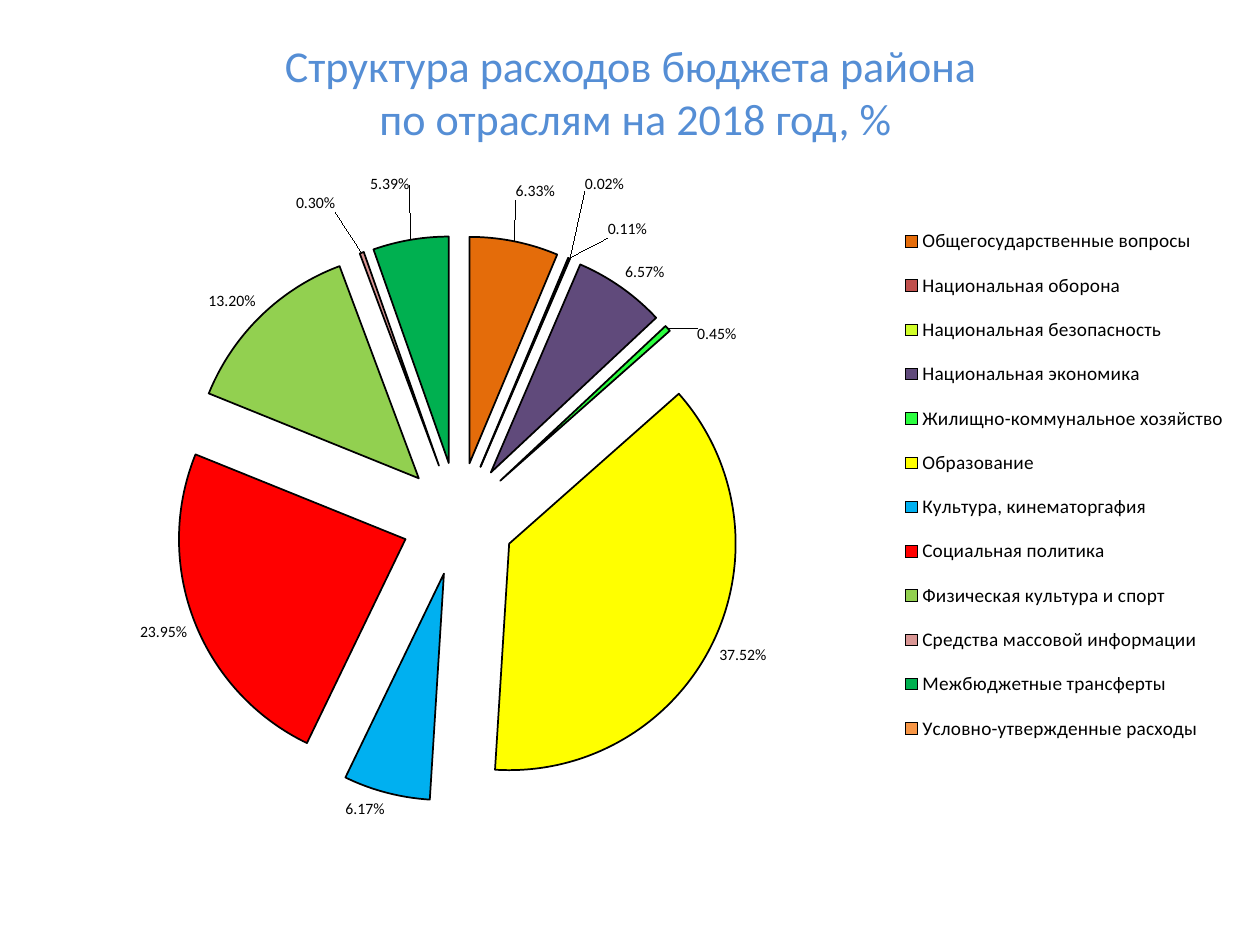
from lxml import etree
from pptx import Presentation
from pptx.chart.data import CategoryChartData
from pptx.dml.color import RGBColor
from pptx.enum.chart import XL_CHART_TYPE, XL_LABEL_POSITION, XL_LEGEND_POSITION
from pptx.enum.text import MSO_ANCHOR, PP_ALIGN
from pptx.oxml.ns import qn
from pptx.util import Inches, Pt

PIE = XL_CHART_TYPE.PIE
OUT_END = XL_LABEL_POSITION.OUTSIDE_END
RIGHT = XL_LEGEND_POSITION.RIGHT
MIDDLE = MSO_ANCHOR.MIDDLE
CENTER = PP_ALIGN.CENTER
FONT = "Calibri"
RATE = "0.00%"

SHARES = [
    ("Общегосударственные вопросы", 0.0633, "E46C0A"),
    ("Национальная оборона", 0.0011, "C0504D"),
    ("Национальная безопасность", 0.0002, "D1FE2A"),
    ("Национальная экономика", 0.0657, "604A7B"),
    ("Жилищно-коммунальное хозяйство", 0.0045, "2BFD3F"),
    ("Образование", 0.3752, "FFFF00"),
    ("Культура, кинематоргафия", 0.0617, "00B0F0"),
    ("Социальная политика", 0.2395, "FF0000"),
    ("Физическая культура и спорт", 0.132, "92D050"),
    ("Средства массовой информации", 0.003, "D99694"),
    ("Межбюджетные трансферты", 0.0539, "00B050"),
    ("Условно-утвержденные расходы", 0, "F79646"),
]
SHIFTS = {0: (0, -0.05), 1: (0.03, -0.02), 2: (0.01, -0.09),
          4: (0.02, 0.03), 9: (-0.02, -0.05), 10: (0, -0.07)}


def color(code):
    return RGBColor.from_string(code)


def style(item, values):
    for name, value in values.items():
        setattr(item, name, value)


def place(shape, box):
    names = ("left", "top", "width", "height")
    style(shape, dict(zip(names, map(Inches, box))))


def node(tag, **attrs):
    return etree.Element(qn(tag), attrs)


def layout(**values):
    root = node("c:layout")
    manual = etree.SubElement(root, qn("c:manualLayout"))
    for name, value in values.items():
        manual.append(node(f"c:{name}", val=str(value)))
    return root


def framed(x, y, w, h, **target):
    return layout(**target, xMode="edge", yMode="edge", x=x, y=y, w=w, h=h)


def add_title(slide, box):
    title = slide.shapes.title
    place(title, box)
    frame = title.text_frame
    style(frame, {"word_wrap": True, "vertical_anchor": MIDDLE})
    para = frame.paragraphs[0]
    para.text = "Структура расходов бюджета района\v по отраслям на 2018 год, %"
    para.alignment = CENTER
    for run in para.runs:
        style(run.font, {"name": FONT, "size": Pt(25.2)})
        run.font.color.rgb = color("558ED5")


def outline(line):
    line.color.rgb = color("000000")
    line.width = Pt(1)


def add_labels(series):
    labels = series.data_labels
    style(labels, {"show_value": True, "show_percentage": False,
                   "position": OUT_END, "number_format": RATE,
                   "number_format_is_linked": False})
    style(labels.font, {"name": FONT, "size": Pt(9)})
    for index in (*SHIFTS, len(SHARES) - 1):
        label = series.points[index].data_label
        label.position = OUT_END
        style(label.font, {"name": FONT, "size": Pt(9)})
    for part in series._element.findall(".//" + qn("c:dLbl")):
        index = int(part[0].get("val"))
        if index in SHIFTS:
            x, y = SHIFTS[index]
            part.insert(1, layout(x=x, y=y))
            part.insert(2, node("c:numFmt", formatCode=RATE, sourceLinked="0"))
        else:
            part[1:] = [node("c:delete", val="1")]


def add_pie(slide, box):
    data = CategoryChartData(number_format=RATE)
    data.categories = [name for name, _, _ in SHARES]
    data.add_series("Series 1", [value for _, value, _ in SHARES])
    chart = slide.shapes.add_chart(PIE, *map(Inches, box), data).chart
    style(chart, {"has_title": False, "has_legend": True})
    style(chart.font, {"name": FONT, "size": Pt(10)})
    chart.font.color.rgb = color("000000")

    legend = chart.legend
    style(legend, {"position": RIGHT, "include_in_layout": False})
    style(legend.font, {"name": FONT, "size": Pt(11)})
    root = legend._element
    for old in root.findall(qn("c:layout")):
        root.remove(old)
    root.find(qn("c:legendPos")).addnext(framed(0.71, 0.05, 0.28, 0.82))

    area = chart._chartSpace.find(".//" + qn("c:plotArea"))
    for old in area.findall(qn("c:layout")):
        area.remove(old)
    area.insert(0, framed(0.03, 0.09, 0.63, 0.84, layoutTarget="inner"))

    plot = chart.plots[0]
    plot.vary_by_categories = True
    series = plot.series[0]
    outline(series.format.line)
    shape = series._element.find(qn("c:spPr"))
    shape.addnext(node("c:explosion", val="25"))
    for index, (_, _, code) in enumerate(SHARES):
        look = series.points[index].format
        look.fill.solid()
        look.fill.fore_color.rgb = color(code)
        outline(look.line)
    add_labels(series)


def main():
    deck = Presentation()
    style(deck, {"slide_width": Inches(10), "slide_height": Inches(7.5)})
    slide = deck.slides.add_slide(deck.slide_layouts[5])
    add_title(slide, (0.28, 0.3, 9.45, 0.85))
    add_pie(slide, (0.35, 1.39, 9.53, 5.35))
    deck.save("out.pptx")


if __name__ == "__main__":
    main()
